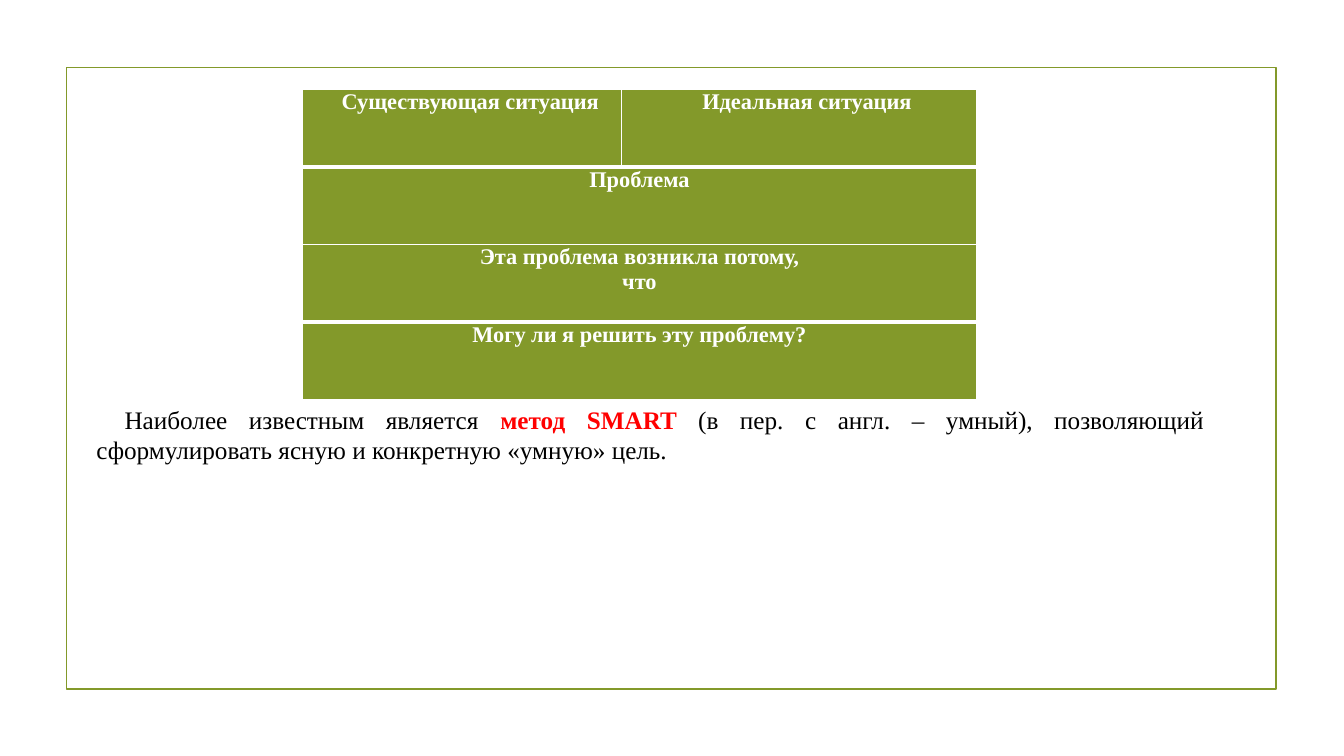
from dataclasses import dataclass

from lxml import etree
from pptx import Presentation, util as u
from pptx.dml.color import RGBColor
from pptx.enum import shapes, text
from pptx.oxml.ns import qn


@dataclass(frozen=True)
class Theme:
    font: str = "Times New Roman"
    olive: str = "83992A"
    white: str = "FFFFFF"
    black: str = "000000"
    red: str = "FF0000"
    cell_size: float = 16
    body_size: float = 18
    line_height: float = 17.9
    thin: float = 1
    thick: float = 3


@dataclass(frozen=True)
class CellText:
    text: str
    left: float = 4.19
    right: float = 4.19
    align: text.PP_ALIGN = text.PP_ALIGN.CENTER


@dataclass(frozen=True)
class Row:
    cells: tuple[CellText, ...]
    top: float
    bottom: float


@dataclass(frozen=True)
class BodyRun:
    text: str
    color: str
    bold: bool = False


T = Theme()
COLUMN_WIDTHS = (8.05, 8.94)
ROW_HEIGHT = 1.95
LEFT = text.PP_ALIGN.LEFT
ROWS = (
    Row((CellText("Существующая ситуация", 0.99, 0, LEFT),
         CellText("Идеальная ситуация", 2.03, 0, LEFT)), T.thin, T.thick),
    Row((CellText("Проблема"),), T.thin, T.thin),
    Row((CellText("Эта проблема возникла потому, что"),), T.thin, T.thin),
    Row((CellText("Могу ли я решить эту проблему?"),), T.thick, T.thin),
)
BODY = (
    BodyRun("Наиболее известным является ", T.black),
    BodyRun("метод SMART ", T.red, True),
    BodyRun("(в пер. с англ. – умный), позволяющий сформулировать "
            "ясную и конкретную «умную» цель.", T.black),
)


def rgb(color: str) -> RGBColor:
    return RGBColor.from_string(color)


def set_indent(p, left: float, right: float, first: float = 0) -> None:
    pPr = p._p.get_or_add_pPr()
    for name, value in (("marL", left), ("marR", right), ("indent", first)):
        pPr.set(name, str(int(u.Cm(value))))


def set_borders(cell, top: float, bottom: float) -> None:
    tcPr = cell._tc.get_or_add_tcPr()
    for side, width in zip("LRTB", (T.thin, T.thin, top, bottom)):
        ln = etree.SubElement(tcPr, qn(f"a:ln{side}"), w=str(int(u.Pt(width))))
        fill = etree.SubElement(ln, qn("a:solidFill"))
        etree.SubElement(fill, qn("a:srgbClr"), val=T.white)


def write_cell(cell, item: CellText) -> None:
    p = cell.text_frame.paragraphs[0]
    p.text = item.text
    p.alignment = item.align
    p.line_spacing = u.Pt(T.line_height)
    set_indent(p, item.left, item.right)
    p.font.name = T.font
    p.font.size = u.Pt(T.cell_size)
    p.font.bold = True
    p.font.color.rgb = rgb(T.white)


def add_frame(s) -> None:
    sp = s.shapes.add_shape(shapes.MSO_SHAPE.RECTANGLE,
                            u.Cm(1.68), u.Cm(1.7), u.Cm(30.48), u.Cm(15.67))
    sp.shadow.inherit = False
    sp.fill.background()
    sp.line.color.rgb = rgb(T.olive)
    sp.line.width = u.Pt(1.25)


def add_problem_table(s) -> None:
    table = s.shapes.add_table(
        len(ROWS), len(COLUMN_WIDTHS), u.Cm(7.62), u.Cm(2.26),
        u.Cm(sum(COLUMN_WIDTHS)), u.Cm(ROW_HEIGHT * len(ROWS))).table
    table.horz_banding = False
    for column, width in zip(table.columns, COLUMN_WIDTHS):
        column.width = u.Cm(width)
    for i, row in enumerate(ROWS):
        table.rows[i].height = u.Cm(ROW_HEIGHT)
        cells = list(table.rows[i].cells)
        for cell in cells:
            cell.margin_left = cell.margin_right = 0
            cell.margin_top = cell.margin_bottom = 0
            set_borders(cell, row.top, row.bottom)
            cell.fill.solid()
            cell.fill.fore_color.rgb = rgb(T.olive)
        if len(row.cells) == 1:
            cells[0].merge(cells[-1])
        for cell, item in zip(cells, row.cells):
            write_cell(cell, item)


def add_body(s) -> None:
    sp = s.shapes.add_textbox(u.Cm(1.98), u.Cm(10.06), u.Cm(29.85), u.Cm(1.8))
    tf = sp.text_frame
    tf.word_wrap = True
    tf.auto_size = text.MSO_AUTO_SIZE.SHAPE_TO_FIT_TEXT
    p = tf.paragraphs[0]
    p.alignment = text.PP_ALIGN.JUSTIFY
    set_indent(p, 0.2, 1.24, 0.71)
    p.font.name = T.font
    p.font.size = u.Pt(T.body_size)
    for item in BODY:
        r = p.add_run()
        r.text = item.text
        r.font.name = T.font
        r.font.size = u.Pt(T.body_size)
        r.font.bold = item.bold
        r.font.color.rgb = rgb(item.color)


def main() -> None:
    prs = Presentation()
    prs.slide_width, prs.slide_height = u.Cm(33.87), u.Cm(19.05)
    s = prs.slides.add_slide(prs.slide_layouts[6])
    add_frame(s)
    add_problem_table(s)
    add_body(s)
    prs.save("out.pptx")


if __name__ == "__main__":
    main()
